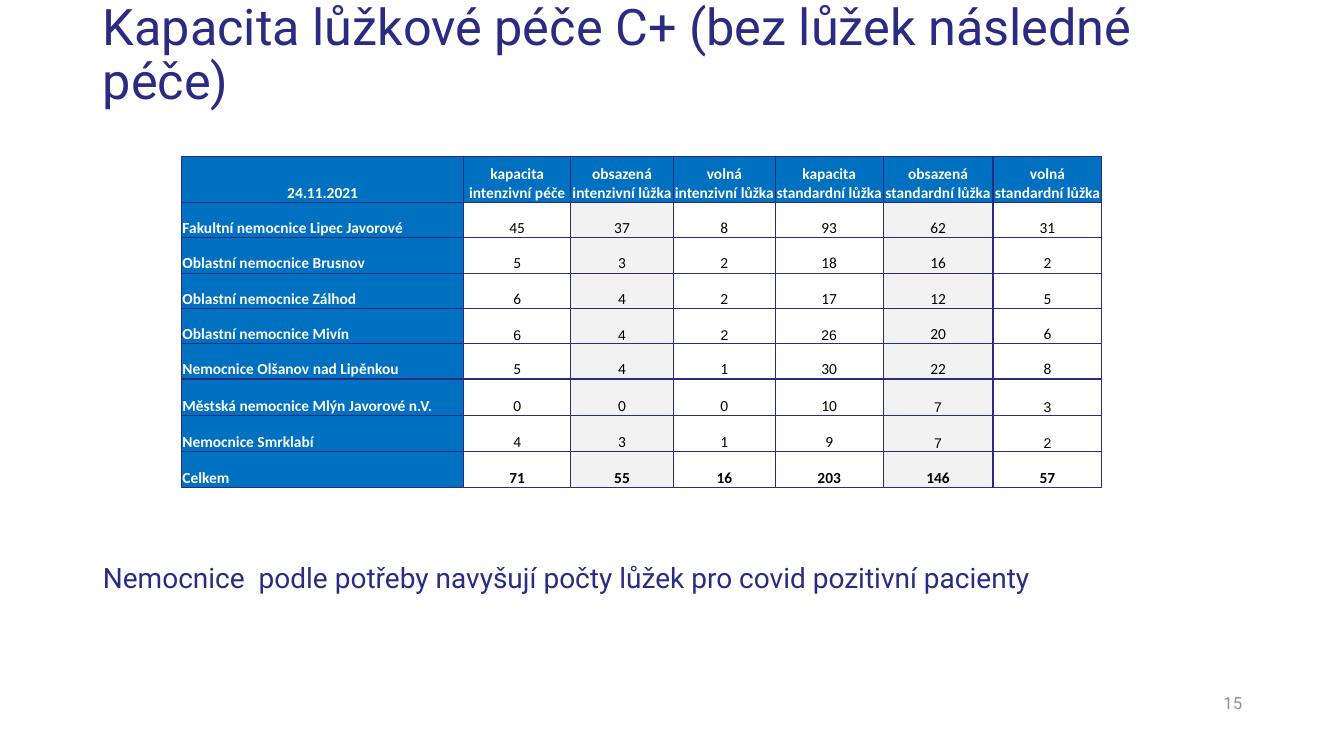
from lxml.etree import SubElement
from pptx import Presentation
from pptx.dml.color import RGBColor
from pptx.enum.text import MSO_ANCHOR as Anchor, MSO_AUTO_SIZE as AutoSize, PP_ALIGN as Align
from pptx.oxml.ns import qn
from pptx.util import Inches, Pt

COLORS = {
    "navy": "2B2B82",
    "blue": "0070C0",
    "grey": "F2F2F2",
    "white": "FFFFFF",
    "black": "000000",
    "number": "8F8FAD",
}

# Shared left edge and width of the text areas
MARGIN, CONTENT_WIDTH = 0.92, 11.5

HEADER = ["24.11.2021", "kapacita intenzivní péče", "obsazená intenzivní lůžka",
          "volná intenzivní lůžka", "kapacita standardní lůžka",
          "obsazená standardní lůžka", "volná standardní lůžka"]
HOSPITALS = [
    ["Fakultní nemocnice Lipec Javorové", 45, 37, 8, 93, 62, 31],
    ["Oblastní nemocnice Brusnov", 5, 3, 2, 18, 16, 2],
    ["Oblastní nemocnice Zálhod", 6, 4, 2, 17, 12, 5],
    ["Oblastní nemocnice Mivín", 6, 4, 2, 26, 20, 6],
    ["Nemocnice Olšanov nad Lipěnkou", 5, 4, 1, 30, 22, 8],
    ["Městská nemocnice Mlýn Javorové n.V.", 0, 0, 0, 10, 7, 3],
    ["Nemocnice Smrklabí", 4, 3, 1, 9, 7, 2],
    ["Celkem", 71, 55, 16, 203, 146, 57],
]
COLUMN_WIDTHS = [2.8, 1.06, 1.02, 1.01, 1.07, 1.09, 1.08]
ROW_HEIGHTS = [0.46] + [0.35] * 5 + [0.36] * 3
OCCUPIED_COLUMNS = (2, 5)
# Columns set in Arial, by row
ARIAL_COLUMNS = {4: (1, 2, 3, 4), 6: (5, 6), 7: (5, 6)}


def rgb(name):
    return RGBColor.from_string(COLORS[name])


def set_text(frame, text, size, color, font="Roboto", bold=False, align=Align.LEFT):
    frame.text = text
    para = frame.paragraphs[0]
    para.alignment = align
    for span in para.runs:
        span.font.size = Pt(size)
        span.font.name = font
        span.font.bold = bold
        span.font.color.rgb = rgb(color)
    return para


def place(box, left, top, width, height, anchor):
    box.left, box.top = Inches(left), Inches(top)
    box.width, box.height = Inches(width), Inches(height)
    frame = box.text_frame
    frame.word_wrap = True
    frame.auto_size = AutoSize.NONE
    frame.vertical_anchor = anchor
    return frame


def add_title(page, text):
    frame = place(page.shapes.title, MARGIN, 0.41, CONTENT_WIDTH, 0.74, Anchor.BOTTOM)
    set_text(frame, text, 36, "navy").line_spacing = 0.9


def add_body(page, text):
    frame = place(page.placeholders[1], MARGIN, 1.15, CONTENT_WIDTH, 5, Anchor.BOTTOM)
    frame.margin_bottom = Inches(0.25)
    para = set_text(frame, text, 20, "navy", align=Align.JUSTIFY)
    para.line_spacing = 0.9
    properties = para._p.get_or_add_pPr()
    properties.set("marL", "0")
    properties.set("indent", "0")
    SubElement(properties, qn("a:buNone"))


def add_page_number(page, text):
    box = page.shapes.add_textbox(0, 0, 0, 0)
    frame = place(box, 11.28, 6.77, 1.14, 0.4, Anchor.MIDDLE)
    set_text(frame, text, 12, "number", align=Align.RIGHT)


def add_borders(cell):
    properties = cell._tc.get_or_add_tcPr()
    for side in ("a:lnL", "a:lnR", "a:lnT", "a:lnB"):
        line = SubElement(properties, qn(side), w=str(Pt(1)))
        fill = SubElement(line, qn("a:solidFill"))
        SubElement(fill, qn("a:srgbClr"), val=COLORS["navy"])


def format_cell(cell, text, row, column):
    is_label = row == 0 or column == 0
    is_arial = column in ARIAL_COLUMNS.get(row, ())
    cell.vertical_anchor = Anchor.BOTTOM
    cell.margin_left = cell.margin_right = cell.margin_top = Inches(0.01)
    cell.margin_bottom = 0
    set_text(cell.text_frame, text,
             size=10 if is_arial else 11,
             color="white" if is_label else "black",
             font="Arial" if is_arial else "Calibri",
             bold=is_label or row == len(HOSPITALS),
             align=Align.LEFT if column == 0 and row > 0 else Align.CENTER)
    add_borders(cell)
    cell.fill.solid()
    shade = "grey" if column in OCCUPIED_COLUMNS else "white"
    cell.fill.fore_color.rgb = rgb("blue" if is_label else shade)


def add_capacity_table(page):
    rows = [HEADER] + HOSPITALS
    table = page.shapes.add_table(
        len(rows), len(HEADER), Inches(1.8), Inches(1.55),
        Inches(sum(COLUMN_WIDTHS)), Inches(sum(ROW_HEIGHTS))).table
    for column, width in zip(table.columns, COLUMN_WIDTHS):
        column.width = Inches(width)
    for row, height in zip(table.rows, ROW_HEIGHTS):
        row.height = Inches(height)
    for row, values in enumerate(rows):
        for column, value in enumerate(values):
            format_cell(table.cell(row, column), str(value), row, column)


def main():
    deck = Presentation()
    deck.slide_width, deck.slide_height = Inches(13.33), Inches(7.5)
    page = deck.slides.add_slide(deck.slide_layouts[1])

    # Heading and page number
    add_title(page, "Kapacita lůžkové péče C+ (bez lůžek následné péče)")
    add_page_number(page, "15")

    # Note below the table, then the table itself
    add_body(page, "Nemocnice  podle potřeby navyšují počty lůžek pro covid pozitivní pacienty")
    add_capacity_table(page)

    deck.save("out.pptx")


if __name__ == "__main__":
    main()
